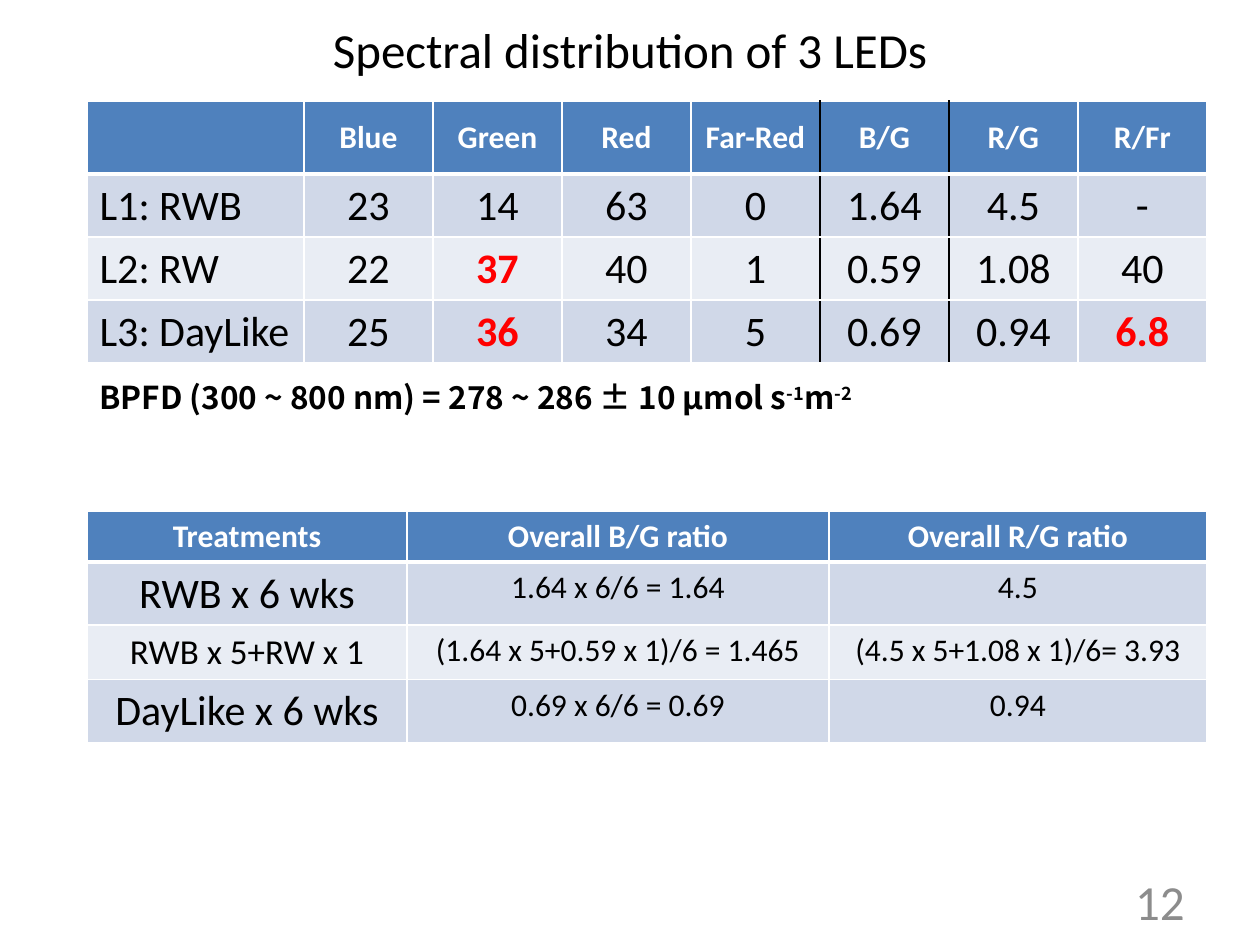
from pptx import Presentation
from pptx import util as u
from pptx.dml.color import RGBColor
from pptx.enum import text
from pptx.oxml.ns import qn
from lxml import etree

PX = u.Inches(1) // 126
FONT, NOTE_FONT = "Calibri", "Noto Sans CJK SC"
COLORS = {"header": "4F81BD", "odd": "D0D8E8", "even": "E9EDF4",
          "white": "FFFFFF", "black": "000000", "red": "FF0000", "gray": "8C8C8C"}
LEFT, CENTER, RIGHT = text.PP_ALIGN.LEFT, text.PP_ALIGN.CENTER, text.PP_ALIGN.RIGHT
TOP, MIDDLE = text.MSO_ANCHOR.TOP, text.MSO_ANCHOR.MIDDLE

SPECTRA = [
    ["", "Blue", "Green", "Red", "Far-Red", "B/G", "R/G", "R/Fr"],
    ["L1: RWB", "23", "14", "63", "0", "1.64", "4.5", "-"],
    ["L2: RW", "22", "37", "40", "1", "0.59", "1.08", "40"],
    ["L3: DayLike", "25", "36", "34", "5", "0.69", "0.94", "6.8"],
]
HIGHLIGHTS = {(2, 2), (3, 2), (3, 7)}
DARK_EDGES = {5, 6}  # column boundaries around B/G

RATIOS = [
    ["Treatments", "Overall B/G ratio", "Overall R/G ratio"],
    ["RWB x 6 wks", "1.64 x 6/6 = 1.64", "4.5"],
    ["RWB x 5+RW x 1", "(1.64 x 5+0.59 x 1)/6 = 1.465", "(4.5 x 5+1.08 x 1)/6= 3.93"],
    ["DayLike x 6 wks", "0.69 x 6/6 = 0.69", "0.94"],
]
TREATMENT_SIZES = {1: 24, 2: 20, 3: 24}


def px(*values):
    return [u.Emu(v * PX) for v in values]


def rgb(name):
    return RGBColor.from_string(COLORS[name])


def add_run(p, content, size=18, color="black", bold=False, font=FONT, baseline=0):
    r = p.add_run()
    r.text = content
    r.font.size, r.font.bold, r.font.name = u.Pt(size), bold, font
    r.font.color.rgb = rgb(color)
    if baseline:
        r.font._element.set("baseline", str(baseline * 1000))
    return r


def add_text(slide, box, parts, align=LEFT, anchor=TOP, **fmt):
    """Add a text box; parts are (content, baseline percent) pairs."""
    tf = slide.shapes.add_textbox(*px(*box)).text_frame
    tf.word_wrap, tf.vertical_anchor = True, anchor
    p = tf.paragraphs[0]
    p.alignment = align
    for content, baseline in parts:
        add_run(p, content, baseline=baseline, **fmt)


def set_border(cell, side, color, width):
    ln = etree.SubElement(cell._tc.get_or_add_tcPr(), qn(f"a:ln{side}"), w=str(u.Pt(width)))
    fill = etree.SubElement(ln, qn("a:solidFill"))
    etree.SubElement(fill, qn("a:srgbClr"), val=COLORS[color])


def add_table(slide, left, top, widths, heights, rows, cell_format, dark_edges=()):
    """Add a banded table; cell_format(row, col) gives align, anchor and run format."""
    size = px(left, top, sum(widths), sum(heights))
    table = slide.shapes.add_table(len(rows), len(widths), *size).table
    table.horz_banding = False
    for column, width in zip(table.columns, px(*widths)):
        column.width = width
    for row, height in zip(table.rows, px(*heights)):
        row.height = height

    for i, values in enumerate(rows):
        band = "header" if i == 0 else "odd" if i % 2 else "even"
        for j, value in enumerate(values):
            cell = table.cell(i, j)
            # Borders come before the fill in the cell properties
            set_border(cell, "L", "black" if j in dark_edges else "white", 1)
            set_border(cell, "R", "black" if j + 1 in dark_edges else "white", 1)
            set_border(cell, "T", "white", 3 if i == 1 else 1)
            set_border(cell, "B", "white", 3 if i == 0 else 1)
            cell.fill.solid()
            cell.fill.fore_color.rgb = rgb(band)
            align, anchor, fmt = cell_format(i, j)
            cell.vertical_anchor = anchor
            p = cell.text_frame.paragraphs[0]
            p.alignment = align
            if value:
                add_run(p, value, **fmt)


def spectra_format(i, j):
    if i == 0:
        return CENTER, MIDDLE, {"color": "white", "bold": True}
    marked = (i, j) in HIGHLIGHTS
    fmt = {"size": 24, "color": "red" if marked else "black", "bold": marked}
    return (CENTER if j else LEFT), MIDDLE, fmt


def ratios_format(i, j):
    if i == 0:
        return CENTER, TOP, {"color": "white", "bold": True}
    if j == 0:
        return CENTER, MIDDLE, {"size": TREATMENT_SIZES[i]}
    return CENTER, TOP, {}


def main():
    prs = Presentation()
    prs.slide_width, prs.slide_height = px(1260, 945)
    slide = prs.slides.add_slide(prs.slide_layouts[6])

    # Title and page number
    add_text(slide, (87, 0, 1086, 98), [("Spectral distribution of 3 LEDs", 0)],
             align=CENTER, anchor=MIDDLE, size=28)
    add_text(slide, (903, 876, 294, 50), [("12", 0)],
             align=RIGHT, anchor=MIDDLE, size=28, color="gray")

    # Spectral share of each LED
    add_table(slide, 87, 101, [217] + [129] * 7, [73] + [63] * 3,
              SPECTRA, spectra_format, DARK_EDGES)

    # Photon flux note
    add_text(slide, (87, 372, 814, 50),
             [("BPFD (300 ~ 800 nm) = 278 ~ 286 ± 10 µmol s", 0), ("-1", 30), ("m", 0), ("-2", 30)],
             bold=True, font=NOTE_FONT)

    # Overall ratios by treatment
    add_table(slide, 87, 511, [320, 422, 378], [51, 63, 54, 63], RATIOS, ratios_format)

    prs.save("out.pptx")


if __name__ == "__main__":
    main()
